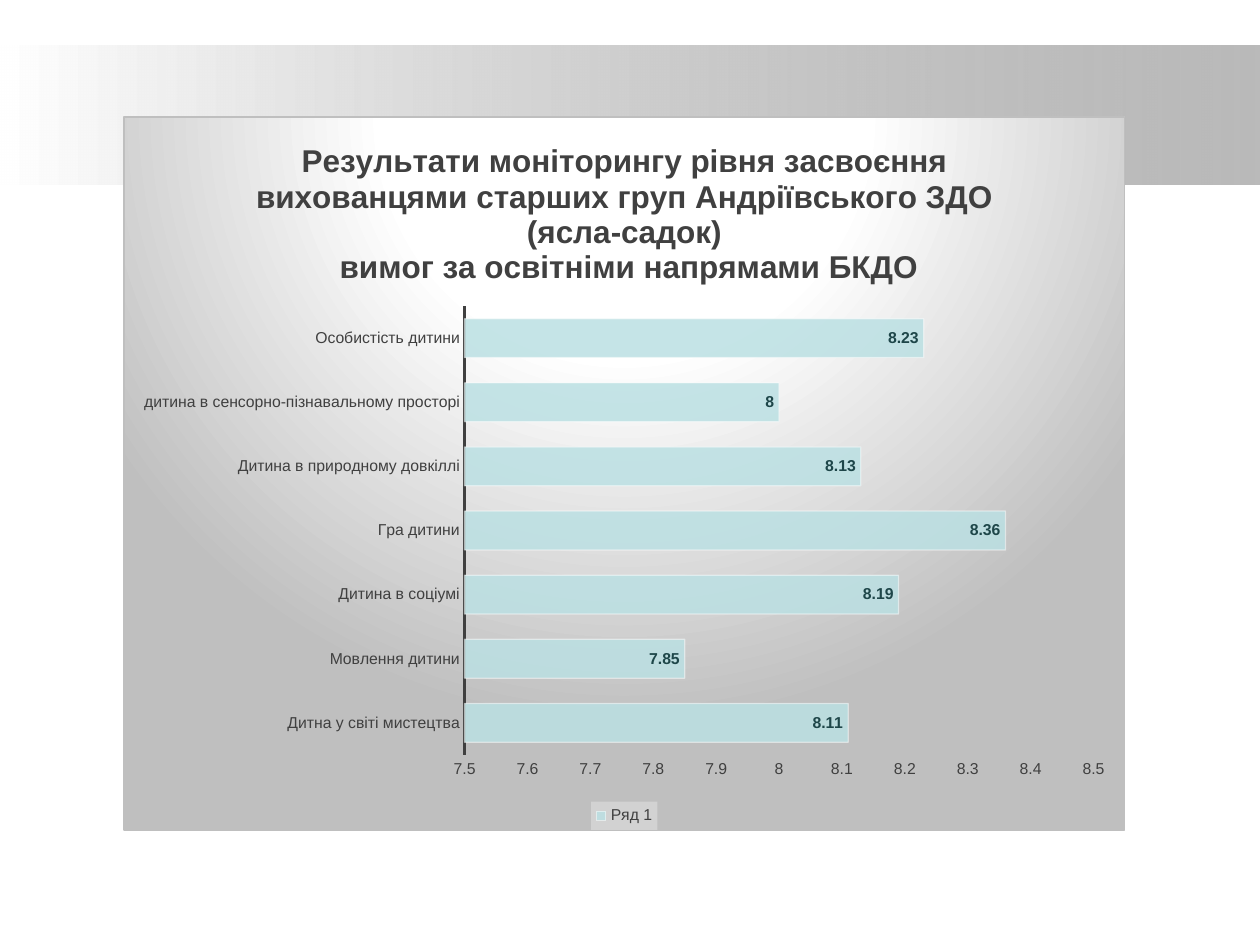
from typing import NamedTuple

import lxml.etree
import pptx
import pptx.chart.data
import pptx.dml.color
import pptx.enum.chart
import pptx.enum.shapes
import pptx.oxml
import pptx.oxml.ns
import pptx.util

WIDTH, HEIGHT = pptx.util.Inches(10), pptx.util.Inches(7.5)
FONT, INK, GREY, WHITE = "Arial", "404040", "BFBFBF", "FFFFFF"
TITLE_LINES = [
    "Результати моніторингу рівня засвоєння вихованцями старших груп "
    "Андріївського ЗДО (ясла-садок)",
    " вимог за освітніми напрямами БКДО",
]


class Box(NamedTuple):
    """A place given as shares of the slide's size."""
    left: float
    top: float
    width: float
    height: float

    def lengths(self) -> tuple[int, int, int, int]:
        return (int(self.left * WIDTH), int(self.top * HEIGHT),
                int(self.width * WIDTH), int(self.height * HEIGHT))


class Stop(NamedTuple):
    percent: int
    color: str
    alpha: int = 100


class Result(NamedTuple):
    direction: str
    score: float


BAND = Box(0, 0.048, 1, 0.147)
PANEL = Box(0.098, 0.123, 0.795, 0.756)
# Bars are listed from the bottom up
RESULTS = [
    Result("Дитна у світі мистецтва", 8.11),
    Result("Мовлення дитини", 7.85),
    Result("Дитина в соціумі", 8.19),
    Result("Гра дитини", 8.36),
    Result("Дитина в природному довкіллі", 8.13),
    Result("дитина в сенсорно-пізнавальному просторі", 8),
    Result("Особистість дитини", 8.23),
]


def rgb(color: str) -> pptx.dml.color.RGBColor:
    return pptx.dml.color.RGBColor.from_string(color)


def style_font(font, size: float, color: str = INK, bold: bool = False) -> None:
    font.name, font.size, font.bold = FONT, pptx.util.Pt(size), bold
    font.color.rgb = rgb(color)


def style_fill(fill, color: str, alpha: int = 100) -> None:
    """Solid colour with its opacity in percent."""
    fill.solid()
    fill.fore_color.rgb = rgb(color)
    if alpha < 100:
        tag = pptx.oxml.ns.qn("a:srgbClr")
        for node in fill._xPr.iter(tag):
            lxml.etree.SubElement(node, pptx.oxml.ns.qn("a:alpha"), val=str(alpha * 1000))


def gradient_xml(stops: list[Stop], direction: str) -> str:
    marks = "".join(
        f'<a:gs pos="{stop.percent * 1000}"><a:srgbClr val="{stop.color}">'
        f'<a:alpha val="{stop.alpha * 1000}"/></a:srgbClr></a:gs>'
        for stop in stops)
    return (f'<a:gradFill {pptx.oxml.ns.nsdecls("a")} rotWithShape="1">'
            f'<a:gsLst>{marks}</a:gsLst>{direction}</a:gradFill>')


def draw_band(slide) -> None:
    band = slide.shapes.add_shape(pptx.enum.shapes.MSO_SHAPE.RECTANGLE, *BAND.lengths())
    band.shadow.inherit = False
    band.line.fill.background()
    gradient = gradient_xml([Stop(0, WHITE), Stop(100, "808080", 54)],
                            '<a:lin ang="0" scaled="1"/>')
    geometry = band._element.spPr.find(pptx.oxml.ns.qn("a:prstGeom"))
    geometry.addnext(pptx.oxml.parse_xml(gradient))


def style_panel(chart) -> None:
    """Radial background and thin border of the whole chart."""
    gradient = gradient_xml(
        [Stop(0, WHITE), Stop(39, WHITE), Stop(100, GREY)],
        '<a:path path="circle"><a:fillToRect l="50000" t="-80000" r="50000" b="180000"/></a:path>')
    panel = pptx.oxml.parse_xml(
        f'<c:spPr {pptx.oxml.ns.nsdecls("c", "a")}>{gradient}<a:ln w="9525"><a:solidFill>'
        f'<a:srgbClr val="{GREY}"/></a:solidFill></a:ln></c:spPr>')
    chart._chartSpace.find(pptx.oxml.ns.qn("c:chart")).addnext(panel)


def style_title(chart) -> None:
    frame = chart.chart_title.text_frame
    frame.text = "\n".join(TITLE_LINES)
    for paragraph in frame.paragraphs:
        style_font(paragraph.font, 18, bold=True)
        for run in paragraph.runs:
            style_font(run.font, 18, bold=True)
    chart.chart_title.include_in_layout = False


def style_axes(chart) -> None:
    directions, scores = chart.category_axis, chart.value_axis
    for axis in (directions, scores):
        axis.major_tick_mark = axis.minor_tick_mark = pptx.enum.chart.XL_TICK_MARK.NONE
        axis.has_major_gridlines = False
        style_font(axis.tick_labels.font, 9)
    style_fill(directions.format.line.fill, INK)
    directions.format.line.width = pptx.util.Pt(1.5)
    scores.format.line.fill.background()
    scores.minimum_scale, scores.maximum_scale, scores.major_unit = 7.5, 8.5, 0.1


def style_bars(chart) -> None:
    plot = chart.plots[0]
    plot.gap_width, plot.vary_by_categories = 65, False
    bars = plot.series[0]
    style_fill(bars.format.fill, "BBE0E3", 85)
    style_fill(bars.format.line.fill, WHITE, 50)
    bars.format.line.width = pptx.util.Pt(0.75)
    labels = bars.data_labels
    labels.show_value = True
    labels.position = pptx.enum.chart.XL_LABEL_POSITION.INSIDE_END
    style_font(labels.font, 9, "1E4649", bold=True)


def style_legend(chart) -> None:
    chart.has_legend = True
    legend = chart.legend
    legend.position = pptx.enum.chart.XL_LEGEND_POSITION.BOTTOM
    legend.include_in_layout = False
    style_font(legend.font, 9)
    backing = pptx.oxml.parse_xml(
        f'<c:spPr {pptx.oxml.ns.nsdecls("c", "a")}><a:solidFill><a:srgbClr val="F2F2F2">'
        '<a:alpha val="39000"/></a:srgbClr></a:solidFill></c:spPr>')
    legend._element.find(pptx.oxml.ns.qn("c:overlay")).addnext(backing)


def draw_chart(slide) -> None:
    data = pptx.chart.data.CategoryChartData()
    data.categories = [result.direction for result in RESULTS]
    data.add_series("Ряд 1", [result.score for result in RESULTS])
    chart = slide.shapes.add_chart(
        pptx.enum.chart.XL_CHART_TYPE.BAR_CLUSTERED, *PANEL.lengths(), data).chart
    style_font(chart.font, 10, "000000")
    style_panel(chart)
    style_title(chart)
    style_axes(chart)
    style_bars(chart)
    style_legend(chart)


def main() -> None:
    deck = pptx.Presentation()
    deck.slide_width, deck.slide_height = WIDTH, HEIGHT
    slide = deck.slides.add_slide(deck.slide_layouts[6])
    draw_band(slide)
    draw_chart(slide)
    deck.save("out.pptx")


if __name__ == "__main__":
    main()
